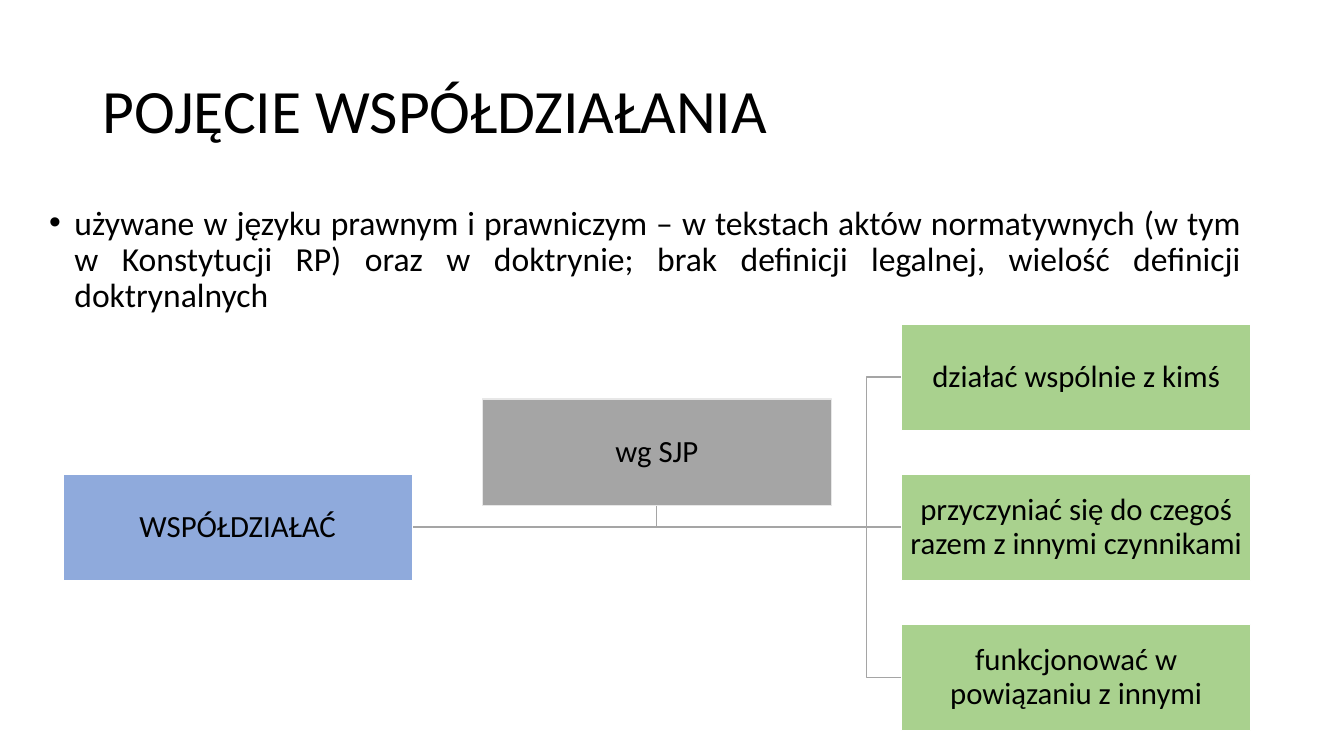
from pptx import Presentation
from pptx.dml.color import RGBColor
from pptx.enum.shapes import MSO_CONNECTOR, MSO_SHAPE
from pptx.enum.text import MSO_ANCHOR, MSO_AUTO_SIZE, PP_ALIGN
from pptx.oxml.ns import qn
from pptx.util import Pt
from lxml.etree import SubElement

PX = 4572
BLACK = RGBColor(0x00, 0x00, 0x00)
WHITE = RGBColor(0xFF, 0xFF, 0xFF)
BLUE = RGBColor(0x8F, 0xAA, 0xDC)
GREEN = RGBColor(0xA9, 0xD1, 0x8E)
GRAY = RGBColor(0xA5, 0xA5, 0xA5)
PALE_GRAY = RGBColor(0xE7, 0xE7, 0xE7)

BOX_WIDTH, BOX_HEIGHT = 693, 211
TERM_LEFT, SOURCE_LEFT, MEANING_LEFT = 125, 957, 1789
MIDDLE_TOP, ROW_STEP = 941, 298
SOURCE_TOP = 792
TERM_RIGHT = TERM_LEFT + BOX_WIDTH
TRUNK_X = 1720
AXIS_Y = MIDDLE_TOP + BOX_HEIGHT // 2


def write(frame, text, size, align, anchor):
    frame.word_wrap = True
    frame.auto_size = MSO_AUTO_SIZE.NONE
    frame.vertical_anchor = anchor
    paragraph = frame.paragraphs[0]
    paragraph.alignment = align
    paragraph.line_spacing = 0.9
    paragraph.space_before = Pt(0)
    run = paragraph.add_run()
    run.text = text
    run.font.size = Pt(size)
    run.font.name = "Calibri"
    run.font.color.rgb = BLACK
    return paragraph


prs = Presentation()
prs.slide_width, prs.slide_height = 2667 * PX, 1500 * PX
slide = prs.slides.add_slide(prs.slide_layouts[5])
shapes = slide.shapes

heading = shapes.title
heading.left, heading.top = 183 * PX, 80 * PX
heading.width, heading.height = 2300 * PX, 290 * PX
write(heading.text_frame, "POJĘCIE WSPÓŁDZIAŁANIA", 44, PP_ALIGN.LEFT, MSO_ANCHOR.MIDDLE)

usage = shapes.add_textbox(78 * PX, 399 * PX, 2405 * PX, 952 * PX)
usage_paragraph = write(
    usage.text_frame,
    "używane w języku prawnym i prawniczym – w tekstach aktów normatywnych "
    "(w tym w Konstytucji RP) oraz w doktrynie; brak definicji legalnej, "
    "wielość definicji doktrynalnych",
    24, PP_ALIGN.JUSTIFY, MSO_ANCHOR.TOP)
usage_format = usage_paragraph._p.get_or_add_pPr()
usage_format.set("marL", str(50 * PX))
usage_format.set("indent", str(-50 * PX))
SubElement(usage_format, qn("a:buFont")).set("typeface", "Arial")
SubElement(usage_format, qn("a:buChar")).set("char", "•")

source_x = SOURCE_LEFT + BOX_WIDTH // 2
routes = [[(source_x, AXIS_Y), (source_x, SOURCE_TOP + BOX_HEIGHT)]]
for row in (1, -1):
    branch_y = AXIS_Y + row * ROW_STEP
    routes.append([(TRUNK_X, AXIS_Y), (TRUNK_X, branch_y), (MEANING_LEFT, branch_y)])
for bends in routes:
    builder = shapes.build_freeform(TERM_RIGHT, AXIS_Y, scale=PX)
    builder.add_line_segments(bends, close=False)
    branch = builder.convert_to_shape()
    branch.shadow.inherit = False
    branch.fill.background()
    branch.line.color.rgb = GRAY
    branch.line.width = Pt(1)

axis = shapes.add_connector(
    MSO_CONNECTOR.STRAIGHT, TERM_RIGHT * PX, AXIS_Y * PX, MEANING_LEFT * PX, AXIS_Y * PX)
axis.line.color.rgb = GRAY
axis.line.width = Pt(1)
SubElement(axis._element.spPr, qn("a:effectLst"))

meanings = [
    "działać wspólnie z kimś",
    "przyczyniać się do czegoś razem z innymi czynnikami",
    "funkcjonować w powiązaniu z innymi",
]
boxes = [("WSPÓŁDZIAŁAĆ", TERM_LEFT, MIDDLE_TOP, BLUE, WHITE)]
for row, meaning in enumerate(meanings, -1):
    boxes.append((meaning, MEANING_LEFT, MIDDLE_TOP + row * ROW_STEP, GREEN, WHITE))
boxes.append(("wg SJP", SOURCE_LEFT, SOURCE_TOP, GRAY, PALE_GRAY))

for label, left, top, fill, border in boxes:
    box = shapes.add_shape(
        MSO_SHAPE.RECTANGLE, left * PX, top * PX, BOX_WIDTH * PX, BOX_HEIGHT * PX)
    box.shadow.inherit = False
    box.fill.solid()
    box.fill.fore_color.rgb = fill
    box.line.color.rgb = border
    box.line.width = Pt(1)
    frame = box.text_frame
    frame.margin_left = frame.margin_right = frame.margin_top = frame.margin_bottom = 3 * PX
    write(frame, label, 22, PP_ALIGN.CENTER, MSO_ANCHOR.MIDDLE)

prs.save("out.pptx")
